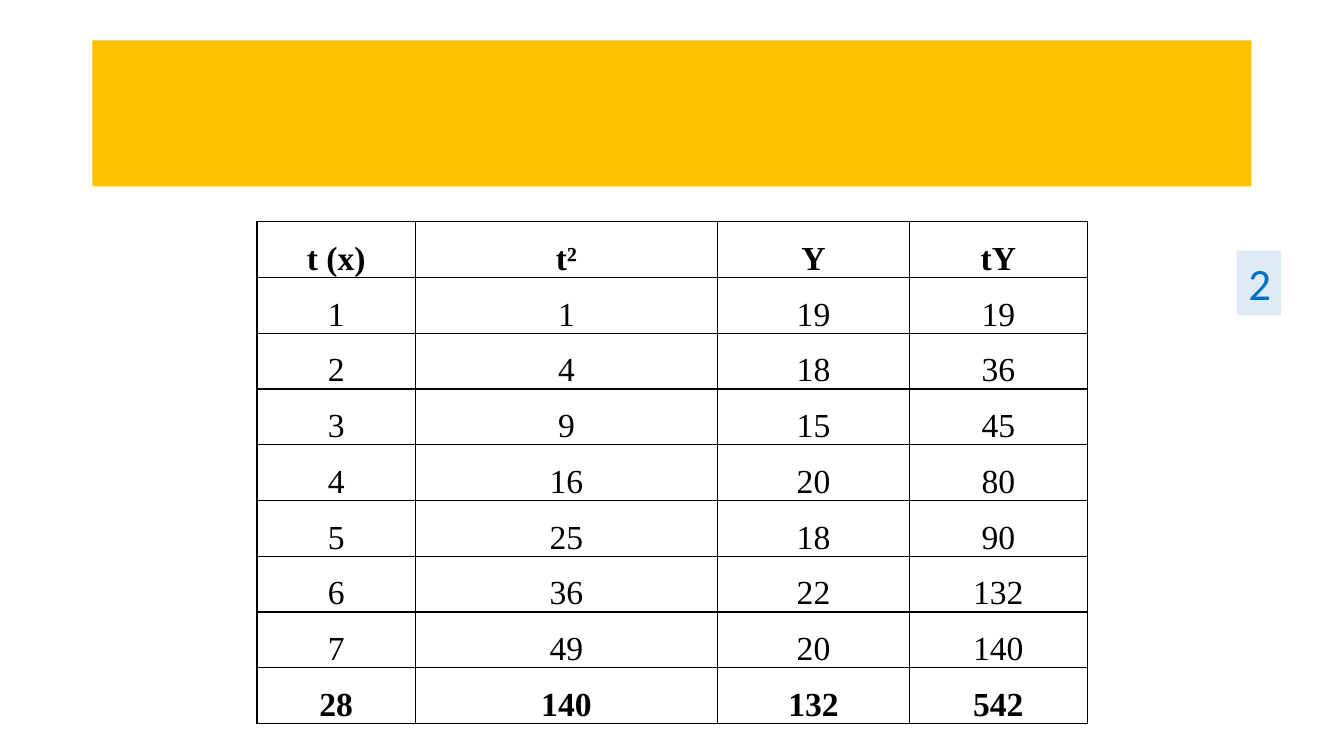
"""Build a slide with a trend calculation table, a title band and a number badge."""
from dataclasses import dataclass

from lxml.etree import SubElement
from pptx import Presentation
from pptx.dml.color import RGBColor
from pptx.enum.shapes import MSO_SHAPE
from pptx.enum.text import MSO_ANCHOR, MSO_AUTO_SIZE, PP_ALIGN
from pptx.oxml.ns import qn
from pptx.util import Pt


@dataclass(frozen=True)
class Theme:
    band: str = "FFC000"
    badge: str = "DEEBF7"
    badge_text: str = "0070C0"
    ink: str = "000000"
    table_font: str = "Times New Roman"
    badge_font: str = "Calibri"
    table_size: int = 24
    badge_size: int = 32


def write(paragraph, text, color, alignment, formats):
    paragraph.text = text
    paragraph.alignment = alignment
    font = paragraph.runs[0].font
    font.color.rgb = RGBColor.from_string(color)
    for name, value in formats.items():
        setattr(font, name, value)


def add_box(slide, bounds, color):
    shape = slide.shapes.add_shape(MSO_SHAPE.RECTANGLE, *map(Pt, bounds))
    shape.shadow.inherit = False
    shape.fill.solid()
    shape.fill.fore_color.rgb = RGBColor.from_string(color)
    shape.line.fill.background()
    return shape


theme = Theme()
presentation = Presentation()
presentation.slide_width, presentation.slide_height = Pt(960), Pt(540)
slide = presentation.slides.add_slide(presentation.slide_layouts[6])

observations = [19, 18, 15, 20, 18, 22, 20]
series = [(t, t * t, y, t * y) for t, y in enumerate(observations, start=1)]
totals = [sum(column) for column in zip(*series)]
rows = [("t (x)", "t²", "Y", "tY"), *series, totals]
column_widths = [113, 216, 137, 127]
row_height = 36.7

table = slide.shapes.add_table(
    len(rows), len(column_widths), Pt(183.6), Pt(158.4),
    Pt(sum(column_widths)), Pt(row_height * len(rows)),
).table
table.first_row = table.horz_banding = False
for column, width in zip(table.columns, column_widths):
    column.width = Pt(width)

cell_format = {"margin_left": Pt(5), "margin_right": Pt(5), "margin_top": 0, "margin_bottom": 0}
for row_index, values in enumerate(rows):
    table.rows[row_index].height = Pt(row_height)
    for column_index, value in enumerate(values):
        cell = table.cell(row_index, column_index)
        for name, setting in cell_format.items():
            setattr(cell, name, setting)
        cell.vertical_anchor = MSO_ANCHOR.TOP if column_index == 1 else MSO_ANCHOR.MIDDLE
        paragraph = cell.text_frame.paragraphs[0]
        paragraph.line_spacing = 1.5
        write(paragraph, str(value), theme.ink, PP_ALIGN.CENTER, {
            "name": theme.table_font,
            "size": Pt(theme.table_size),
            "bold": row_index in (0, len(rows) - 1),
        })
        properties = cell._tc.get_or_add_tcPr()
        for side in ("lnL", "lnR", "lnT", "lnB"):
            border = SubElement(properties, qn(f"a:{side}"), w=str(Pt(1)))
            fill = SubElement(border, qn("a:solidFill"))
            SubElement(fill, qn("a:srgbClr"), val=theme.ink)
        cell.fill.background()

badge = add_box(slide, (883.4, 179.3, 31.7, 46.1), theme.badge)
frame_format = {"word_wrap": False, "auto_size": MSO_AUTO_SIZE.SHAPE_TO_FIT_TEXT,
                "vertical_anchor": MSO_ANCHOR.TOP}
for name, setting in frame_format.items():
    setattr(badge.text_frame, name, setting)
write(badge.text_frame.paragraphs[0], "2", theme.badge_text, PP_ALIGN.RIGHT,
      {"name": theme.badge_font, "size": Pt(theme.badge_size)})

title_band = add_box(slide, (66, 28.8, 828, 104.4), theme.band)

presentation.save("out.pptx")
